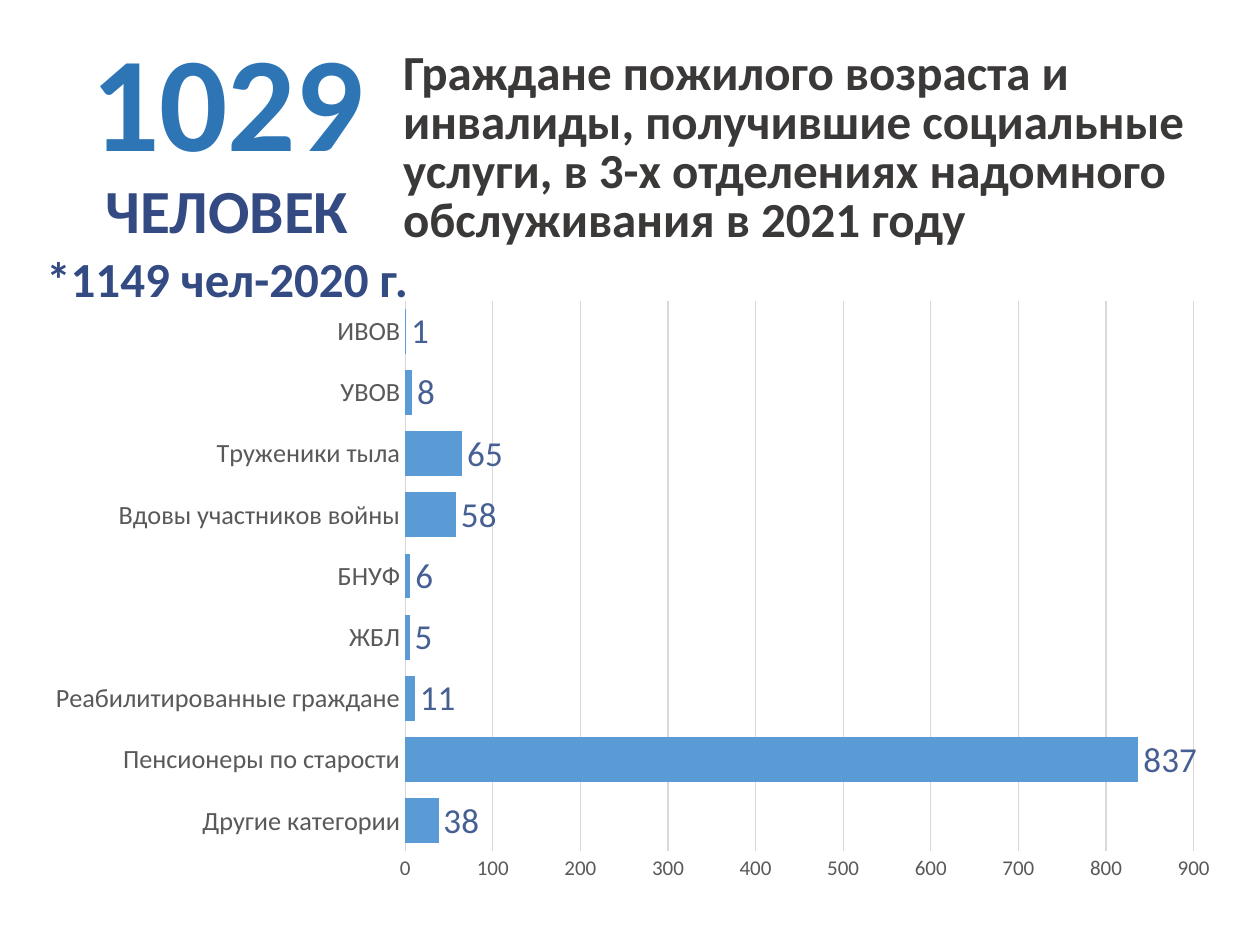
import pptx
import pptx.chart.data
import pptx.dml.color
import pptx.enum.chart
import pptx.enum.text
import pptx.util

Cm = pptx.util.Cm
Pt = pptx.util.Pt
RGBColor = pptx.dml.color.RGBColor
PP_ALIGN = pptx.enum.text.PP_ALIGN
MSO_ANCHOR = pptx.enum.text.MSO_ANCHOR

FONT = "Calibri"
BAR_BLUE = RGBColor(0x5B, 0x9B, 0xD5)
NUMBER_BLUE = RGBColor(0x2E, 0x75, 0xB6)
CAPTION_BLUE = RGBColor(0x33, 0x4A, 0x83)
LABEL_BLUE = RGBColor(0x46, 0x60, 0x93)
TITLE_GRAY = RGBColor(0x3B, 0x38, 0x38)
AXIS_GRAY = RGBColor(0x59, 0x59, 0x59)
GRID_GRAY = RGBColor(0xD9, 0xD9, 0xD9)
BLACK = RGBColor(0, 0, 0)


def set_font(font, size, color, bold=False):
    font.name = FONT
    font.size = Pt(size)
    font.bold = bold
    font.color.rgb = color


def fill_text(shape, lines, color, alignment, spacing, anchor=MSO_ANCHOR.TOP):
    frame = shape.text_frame
    frame.word_wrap = True
    frame.auto_size = pptx.enum.text.MSO_AUTO_SIZE.NONE
    frame.vertical_anchor = anchor
    for index, (text, size) in enumerate(lines):
        paragraph = frame.add_paragraph() if index else frame.paragraphs[0]
        paragraph.alignment = alignment
        paragraph.line_spacing = spacing
        paragraph.space_before = Pt(7.5 if index else 0)
        run = paragraph.add_run()
        run.text = text
        set_font(run.font, size, color, bold=True)


presentation = pptx.Presentation()
presentation.slide_width = Cm(25.4)
presentation.slide_height = Cm(19.05)
slide = presentation.slides.add_slide(presentation.slide_layouts[5])

# Title
title = slide.shapes.title
title.left, title.top, title.width, title.height = Cm(7.87), Cm(0.91), Cm(16.99), Cm(4.47)
fill_text(title, [("Граждане пожилого возраста и инвалиды, получившие социальные "
                   "услуги, в 3-х отделениях надомного обслуживания в 2021 году", 28)],
          TITLE_GRAY, PP_ALIGN.LEFT, Pt(28))

# Bar chart of recipients by category, listed from the bottom up
recipients = {
    "Другие категории": 38,
    "Пенсионеры по старости": 837,
    "Реабилитированные граждане": 11,
    "ЖБЛ": 5,
    "БНУФ": 6,
    "Вдовы участников войны": 58,
    "Труженики тыла": 65,
    "УВОВ": 8,
    "ИВОВ": 1,
}
chart_data = pptx.chart.data.CategoryChartData()
chart_data.categories = list(recipients)
chart_data.add_series("Series 1", list(recipients.values()))
chart = slide.shapes.add_chart(
    pptx.enum.chart.XL_CHART_TYPE.BAR_CLUSTERED,
    Cm(0.64), Cm(5.82), Cm(24.23), Cm(12.19), chart_data).chart
chart.has_title = False
chart.has_legend = False
set_font(chart.font, 10, BLACK)

plot = chart.plots[0]
plot.gap_width = 36
plot.overlap = -1
plot.vary_by_categories = False
series_fill = plot.series[0].format.fill
series_fill.solid()
series_fill.fore_color.rgb = BAR_BLUE

plot.has_data_labels = True
labels = plot.data_labels
labels.show_value = True
labels.position = pptx.enum.chart.XL_LABEL_POSITION.OUTSIDE_END
set_font(labels.font, 20, LABEL_BLUE)

# Axes
for axis, size in ((chart.category_axis, 15), (chart.value_axis, 12)):
    axis.major_tick_mark = pptx.enum.chart.XL_TICK_MARK.NONE
    axis.minor_tick_mark = pptx.enum.chart.XL_TICK_MARK.NONE
    set_font(axis.tick_labels.font, size, AXIS_GRAY)
chart.value_axis.minimum_scale = 0
chart.value_axis.maximum_scale = 900
chart.value_axis.major_unit = 100
chart.value_axis.has_major_gridlines = True
chart.value_axis.format.line.fill.background()
for line in (chart.category_axis.format.line, chart.value_axis.major_gridlines.format.line):
    line.color.rgb = GRID_GRAY
    line.width = Pt(0.75)

# Total and its caption
total = slide.shapes.add_textbox(Cm(1.32), Cm(0.46), Cm(6.55), Cm(3.43))
fill_text(total, [("1029", 77)], NUMBER_BLUE, PP_ALIGN.CENTER, 0.9, MSO_ANCHOR.MIDDLE)
caption = slide.shapes.add_textbox(Cm(-0.64), Cm(3.84), Cm(10.44), Cm(1.09))
fill_text(caption, [("ЧЕЛОВЕК", 35), ("*1149 чел-2020 г.", 28)],
          CAPTION_BLUE, PP_ALIGN.CENTER, Pt(28))

presentation.save("out.pptx")
